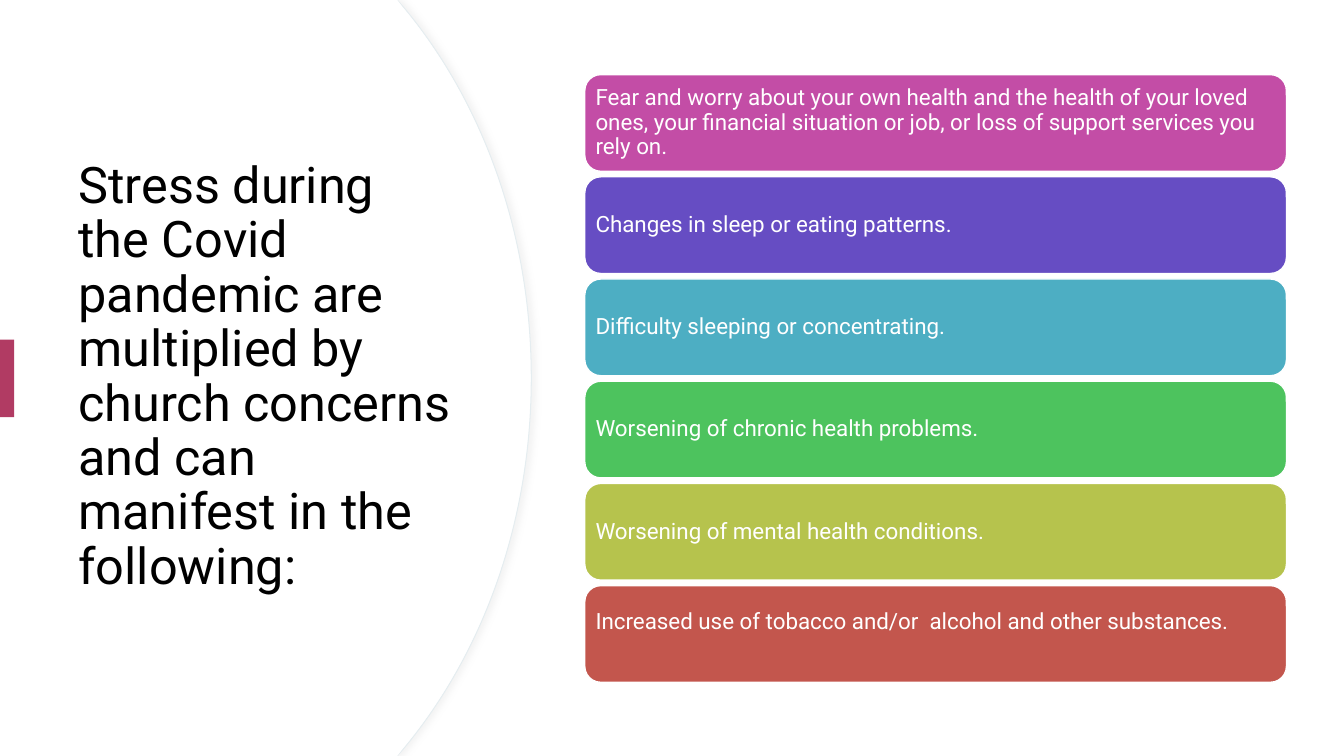
from lxml import etree
from pptx import Presentation
from pptx.dml.color import RGBColor
from pptx.enum.shapes import MSO_SHAPE as Preset
from pptx.enum.text import MSO_ANCHOR as Anchor, PP_ALIGN as Align
from pptx.oxml import parse_xml
from pptx.oxml.ns import qn
from pptx.util import Inches, Pt

COLORS = {
    "white": "FFFFFF", "black": "000000", "edge": "E5EDF0", "accent": "B13B63",
    "magenta": "C34DA6", "violet": "664DC3", "teal": "4DAEC3",
    "green": "4DC35E", "olive": "B6C34D", "red": "C3564D",
}
SYMPTOMS = [
    ("magenta", "Fear and worry about your own health and the health of your loved ones, "
                "your financial situation or job, or loss of support services you rely on."),
    ("violet", "Changes in sleep or eating patterns."),
    ("teal", "Difficulty sleeping or concentrating."),
    ("green", "Worsening of chronic health problems."),
    ("olive", "Worsening of mental health conditions."),
    ("red", "Increased use of tobacco and/or  alcohol and other substances."),
]
SHADOW = (
    '<a:effectLst xmlns:a="http://schemas.openxmlformats.org/drawingml/2006/main">'
    '<a:outerShdw blurRad="50800" dist="38100" dir="0" algn="l" rotWithShape="0">'
    '<a:srgbClr val="D9D9D9"><a:alpha val="30000"/></a:srgbClr>'
    '</a:outerShdw></a:effectLst>'
)
WIDTH, HEIGHT = 13.33, 7.5


def paint(shape, fill, line=None, weight=1):
    shape.shadow.inherit = False
    shape.fill.solid()
    shape.fill.fore_color.rgb = RGBColor.from_string(COLORS[fill])
    if line:
        shape.line.color.rgb = RGBColor.from_string(COLORS[line])
        shape.line.width = Pt(weight)
    else:
        shape.line.fill.background()


def write(shape, text, size, color, side, top, bottom):
    frame = shape.text_frame
    frame.word_wrap = True
    frame.vertical_anchor = Anchor.MIDDLE
    frame.margin_left = frame.margin_right = Inches(side)
    frame.margin_top, frame.margin_bottom = Inches(top), Inches(bottom)
    paragraph = frame.paragraphs[0]
    paragraph.alignment = Align.LEFT
    paragraph.line_spacing = 0.9
    run = paragraph.add_run()
    run.text = text
    run.font.name = "Roboto"
    run.font.size = Pt(size)
    run.font.color.rgb = RGBColor.from_string(COLORS[color])


deck = Presentation()
deck.slide_width, deck.slide_height = Inches(WIDTH), Inches(HEIGHT)
slide = deck.slides.add_slide(deck.slide_layouts[6])
shapes = slide.shapes

UNITS = 100
for reach, edge in ((5.27, "edge"), (5.26, None)):
    upper = [(3.94, 0), (reach - 1.26, 0.08), (reach - 0.48, 1.02), (reach, 2.32)]
    lower = [(x, HEIGHT - y) for x, y in reversed(upper)]
    corners = upper + [(reach, HEIGHT / 2)] + lower + [(0, HEIGHT)]
    outline = shapes.build_freeform(0, 0, scale=Inches(1) / UNITS)
    outline.add_line_segments([(x * UNITS, y * UNITS) for x, y in corners], close=True)
    panel = outline.convert_to_shape()
    paint(panel, "white", edge, 0.75)
    properties = panel.fill._xPr
    lines = list(properties.iter(qn("a:lnTo")))
    for first in (2, 5):
        curve = etree.Element(qn("a:cubicBezTo"))
        lines[first].addprevious(curve)
        for line in lines[first:first + 3]:
            curve.append(line[0])
            line.getparent().remove(line)
    if edge:
        properties.replace(properties.effectLst, parse_xml(SHADOW))

title = shapes.add_textbox(Inches(0.68), Inches(1.27), Inches(3.94), Inches(4.95))
write(title, "Stress during the Covid pandemic are multiplied by church concerns "
      "and can manifest in the following:", size=36, color="black",
      side=0.1, top=0.05, bottom=0.05)

marker = shapes.add_shape(Preset.RECTANGLE, 0, Inches(3.37), Inches(0.14), Inches(0.77))
paint(marker, "accent")

LEFT, TOP, BAR_WIDTH, BAR_HEIGHT = 5.8, 0.74, 6.96, 0.96
PITCH = (5.81 - TOP) / (len(SYMPTOMS) - 1)
for row, (color, symptom) in enumerate(SYMPTOMS):
    bar = shapes.add_shape(Preset.ROUNDED_RECTANGLE, Inches(LEFT), Inches(TOP + row * PITCH),
                           Inches(BAR_WIDTH), Inches(BAR_HEIGHT))
    paint(bar, color, "white")
    write(bar, symptom, size=16, color="white", side=0.06, top=0.07,
          bottom=0.31 if color == "red" else 0.07)

deck.save("out.pptx")
